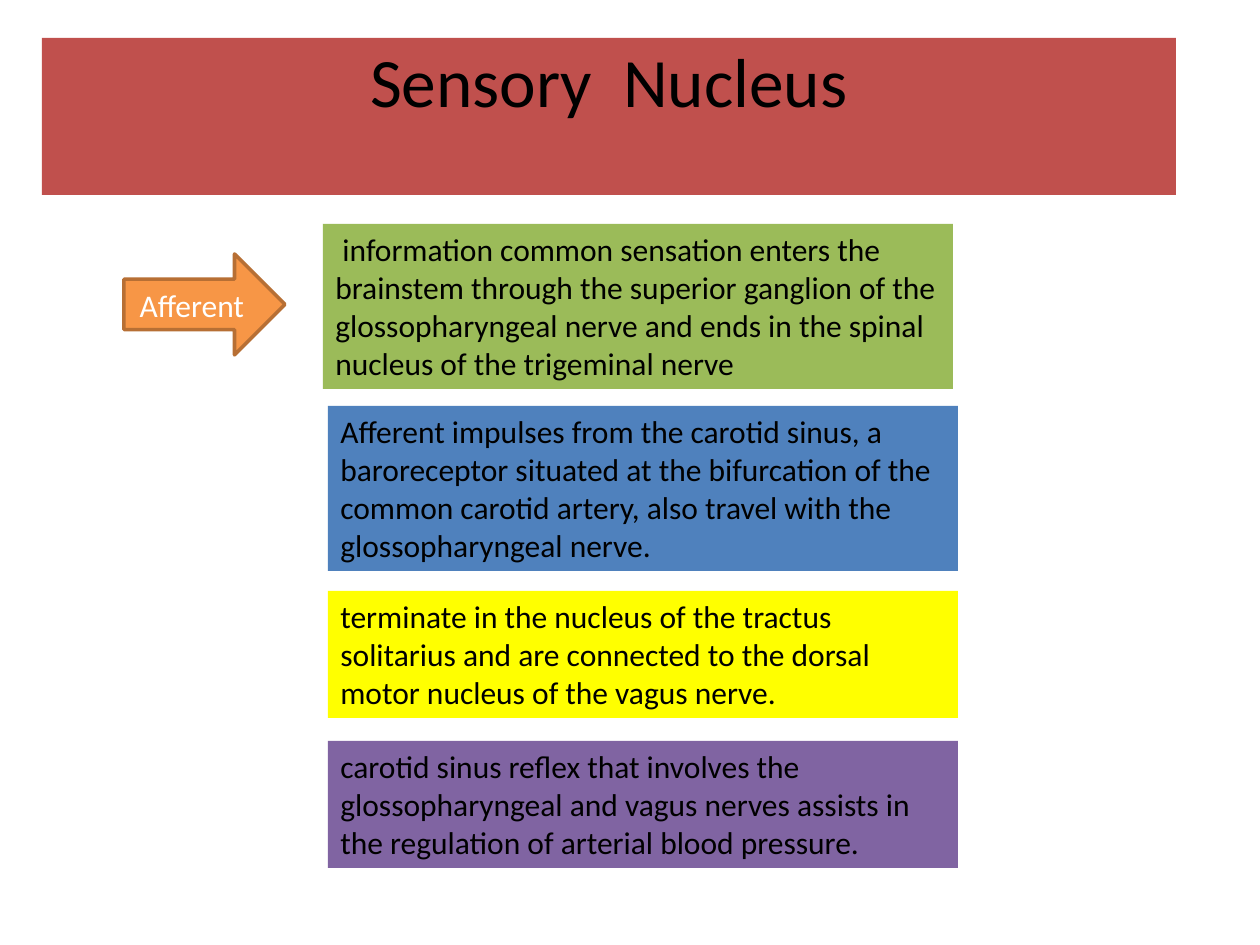
from dataclasses import dataclass

from pptx import Presentation
from pptx.dml.color import RGBColor
from pptx.enum.shapes import MSO_SHAPE
from pptx.enum.text import MSO_ANCHOR, PP_ALIGN
from pptx.util import Emu, Inches, Pt

PX_PER_INCH = 126


@dataclass(frozen=True)
class Theme:
    font: str = "Calibri"
    title_size: float = 39.6
    body_size: float = 18
    dark: str = "000000"
    light: str = "FFFFFF"
    red: str = "C0504D"
    orange: str = "F79646"
    orange_edge: str = "B76F34"
    green: str = "9BBB59"
    blue: str = "4F81BD"
    yellow: str = "FFFF00"
    purple: str = "8064A2"


THEME = Theme()

# left, top, height, fill, text
NOTES = [
    (323, 224, 165, THEME.green,
     " information common sensation enters the brainstem through the superior "
     "ganglion of the glossopharyngeal nerve and ends in the spinal nucleus of "
     "the trigeminal nerve"),
    (328, 406, 165, THEME.blue,
     "Afferent impulses from the carotid sinus, a baroreceptor situated at the "
     "bifurcation of the common carotid artery, also travel with the "
     "glossopharyngeal nerve."),
    (328, 591, 127, THEME.yellow,
     "terminate in the nucleus of the tractus solitarius and are connected to "
     "the dorsal motor nucleus of the vagus nerve."),
    (328, 741, 127, THEME.purple,
     "carotid sinus reflex that involves the glossopharyngeal and vagus nerves "
     "assists in the regulation of arterial blood pressure."),
]
NOTE_WIDTH = 630


def px(length):
    return Emu(round(length * Inches(1) / PX_PER_INCH))


def set_text(shape, text, size, color, align):
    frame = shape.text_frame
    frame.text = text
    paragraph = frame.paragraphs[0]
    paragraph.alignment = align
    font = paragraph.runs[0].font
    font.name = THEME.font
    font.size = Pt(size)
    font.color.rgb = RGBColor.from_string(color)


def fill_shape(shape, color):
    shape.fill.solid()
    shape.fill.fore_color.rgb = RGBColor.from_string(color)


def add_panel(page, left, top, width, height, color, text,
              size=THEME.body_size, align=PP_ALIGN.LEFT):
    """Add a filled text box whose text starts at the top."""
    box = page.shapes.add_textbox(px(left), px(top), px(width), px(height))
    fill_shape(box, color)
    box.text_frame.word_wrap = True
    box.text_frame.vertical_anchor = MSO_ANCHOR.TOP
    set_text(box, text, size, THEME.dark, align)
    return box


def add_title(page, text):
    box = add_panel(page, 42, 38, 1134, 157, THEME.red, text,
                    THEME.title_size, PP_ALIGN.CENTER)
    box.text_frame.margin_top = 0


def add_arrow(page, text):
    arrow = page.shapes.add_shape(
        MSO_SHAPE.RIGHT_ARROW, px(124), px(254), px(161), px(101))
    arrow.shadow.inherit = False
    fill_shape(arrow, THEME.orange)
    arrow.line.color.rgb = RGBColor.from_string(THEME.orange_edge)
    arrow.line.width = Pt(2)
    arrow.text_frame.word_wrap = False
    arrow.text_frame.vertical_anchor = MSO_ANCHOR.MIDDLE
    set_text(arrow, text, THEME.body_size, THEME.light, PP_ALIGN.CENTER)


def main():
    deck = Presentation()
    deck.slide_width, deck.slide_height = Inches(10), Inches(7.5)
    page = deck.slides.add_slide(deck.slide_layouts[6])
    add_title(page, "Sensory  Nucleus")
    add_arrow(page, "Afferent")
    for left, top, height, color, text in NOTES:
        add_panel(page, left, top, NOTE_WIDTH, height, color, text)
    deck.save("out.pptx")


if __name__ == "__main__":
    main()
